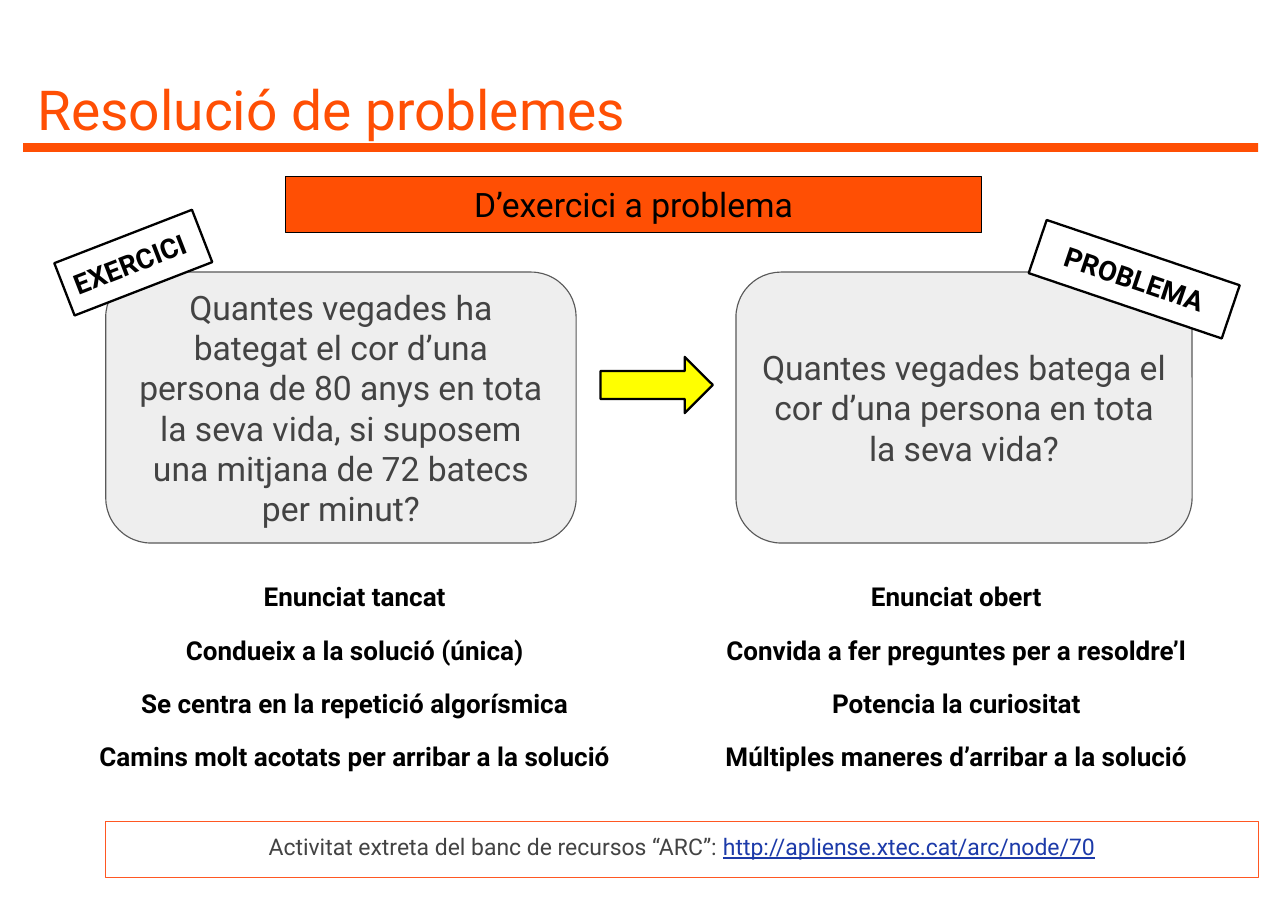
import pptx
import pptx.util
import pptx.dml.color
import pptx.enum.shapes
import pptx.enum.text
import pptx.oxml
import pptx.oxml.ns

MSO = pptx.enum.shapes.MSO_SHAPE
ALIGN = pptx.enum.text.PP_ALIGN
ANCHOR = pptx.enum.text.MSO_ANCHOR

# Content
COLORS = {
    "orange": "FF4F04", "frame": "FF5722", "black": "000000", "white": "FFFFFF",
    "panel": "EEEEEE", "panel_line": "595959", "gray": "434343",
    "yellow": "FFFF00", "link": "1C3AA9",
}
FONT = "Roboto"
TITLE = "Resolució de problemes"
BANNER = "D’exercici a problema"
EXERCISE = ("Quantes vegades ha bategat el cor d’una persona de 80 anys en tota "
            "la seva vida, si suposem una mitjana de 72 batecs per minut?")
PROBLEM = "Quantes vegades batega el cor d’una persona en tota la seva vida?"
SOURCE = "Activitat extreta del banc de recursos “ARC”: "
URL = "http://apliense.xtec.cat/arc/node/70"
COMPARISON = [
    ("Enunciat tancat", "Enunciat obert"),
    ("Condueix a la solució (única)", "Convida a fer preguntes per a resoldre’l"),
    ("Se centra en la repetició algorísmica", "Potencia la curiositat"),
    ("Camins molt acotats per arribar a la solució",
     "Múltiples maneres d’arribar a la solució"),
]

# Text formats
HEADING = {"size": 36, "color": "orange"}
BANNER_TEXT = {"size": 22, "color": "black"}
PANEL_TEXT = {"size": 22, "color": "gray"}
LABEL_TEXT = {"size": 18, "color": "black", "bold": True}
CELL_TEXT = {"size": 17, "color": "black", "bold": True}
NOTE_TEXT = {"size": 15, "color": "gray"}
LINK_TEXT = {"size": 15, "color": "link", "underline": True}

# Shapes: kind, box in px, rotation, fill, line, line width, runs, align, anchor
SHAPES = [
    (MSO.RECTANGLE, (21, 130, 1121, 8), 0, "orange", None, 0, [], None, None),
    (MSO.RECTANGLE, (259, 160, 632, 51), 0, "orange", "black", 0.75,
     [(BANNER, BANNER_TEXT)], ALIGN.CENTER, ANCHOR.MIDDLE),
    (MSO.ROUNDED_RECTANGLE, (668, 247, 414, 246), 0, "panel", "panel_line", 0.75,
     [(PROBLEM, PANEL_TEXT)], ALIGN.CENTER, ANCHOR.MIDDLE),
    (MSO.ROUNDED_RECTANGLE, (96, 247, 427, 246), 0, "panel", "panel_line", 0.75,
     [(EXERCISE, PANEL_TEXT)], ALIGN.CENTER, ANCHOR.MIDDLE),
    (MSO.RIGHT_ARROW, (545, 324, 102, 51), 0, "yellow", "black", 1.5, [], None, None),
    (MSO.RECTANGLE, (54, 213, 134, 51), 338.8, "white", "black", 1.5,
     [("EXERCICI", LABEL_TEXT)], ALIGN.LEFT, ANCHOR.TOP),
    (MSO.RECTANGLE, (937, 228, 185, 51), 18.7, "white", "black", 1.5,
     [("PROBLEMA", LABEL_TEXT)], ALIGN.CENTER, ANCHOR.TOP),
    (MSO.RECTANGLE, (96, 746, 1046, 51), 0, None, "frame", 0.75,
     [(SOURCE, NOTE_TEXT), (URL, LINK_TEXT)], ALIGN.CENTER, ANCHOR.TOP),
]


def px(n):
    return pptx.util.Emu(n * 9144)


def rgb(name):
    return pptx.dml.color.RGBColor.from_string(COLORS[name])


def write(tf, runs, align):
    p = tf.paragraphs[0]
    p.alignment = align
    for text, fmt in runs:
        r = p.add_run()
        r.text = text
        r.font.name = FONT
        for key, value in fmt.items():
            if key == "color":
                r.font.color.rgb = rgb(value)
            else:
                setattr(r.font, key, pptx.util.Pt(value) if key == "size" else value)


def set_frame(tf, inset, anchor):
    tf.word_wrap = True
    tf.vertical_anchor = anchor
    for side in ("left", "top", "right", "bottom"):
        setattr(tf, f"margin_{side}", px(inset))


def add_shape(s, kind, box, rotation, fill, line, width, runs, align, anchor):
    sp = s.shapes.add_shape(kind, *map(px, box))
    sp.shadow.inherit = False
    sp.rotation = rotation
    if fill:
        sp.fill.solid()
        sp.fill.fore_color.rgb = rgb(fill)
    else:
        sp.fill.background()
    if line:
        sp.line.color.rgb = rgb(line)
        sp.line.width = pptx.util.Pt(width)
    else:
        sp.line.fill.background()
    if runs:
        set_frame(sp.text_frame, 10, anchor)
        write(sp.text_frame, runs, align)


def add_borders(cell, color, width):
    tc_pr = cell._tc.get_or_add_tcPr()
    for side in ("lnL", "lnR", "lnT", "lnB"):
        tc_pr.append(pptx.oxml.parse_xml(
            f'<a:{side} {pptx.oxml.ns.nsdecls("a")} w="{pptx.util.Pt(width)}">'
            f'<a:solidFill><a:srgbClr val="{COLORS[color]}"/></a:solidFill></a:{side}>'))


def add_comparison(s):
    rows, cols = len(COMPARISON), len(COMPARISON[0])
    col_w, row_h = 546, 44
    table = s.shapes.add_table(rows, cols, px(49), px(519),
                               px(cols * col_w), px(rows * row_h)).table
    table.first_row = table.horz_banding = False
    for i, row in enumerate(COMPARISON):
        for j, text in enumerate(row):
            cell = table.cell(i, j)
            for side in ("left", "top", "right", "bottom"):
                setattr(cell, f"margin_{side}", px(10))
            add_borders(cell, "white", 0.75)
            cell.fill.background()
            write(cell.text_frame, [(text, CELL_TEXT)], ALIGN.CENTER)


def main():
    prs = pptx.Presentation()
    prs.slide_width, prs.slide_height = px(1169), px(827)
    s = prs.slides.add_slide(prs.slide_layouts[6])

    # Title
    tf = s.shapes.add_textbox(px(21), px(73), px(1121), px(51)).text_frame
    set_frame(tf, 13, ANCHOR.MIDDLE)
    write(tf, [(TITLE, HEADING)], ALIGN.LEFT)

    # Panels, labels and source note
    for shape in SHAPES:
        add_shape(s, *shape)

    # Comparison of exercise and problem
    add_comparison(s)
    prs.save("out.pptx")


if __name__ == "__main__":
    main()
